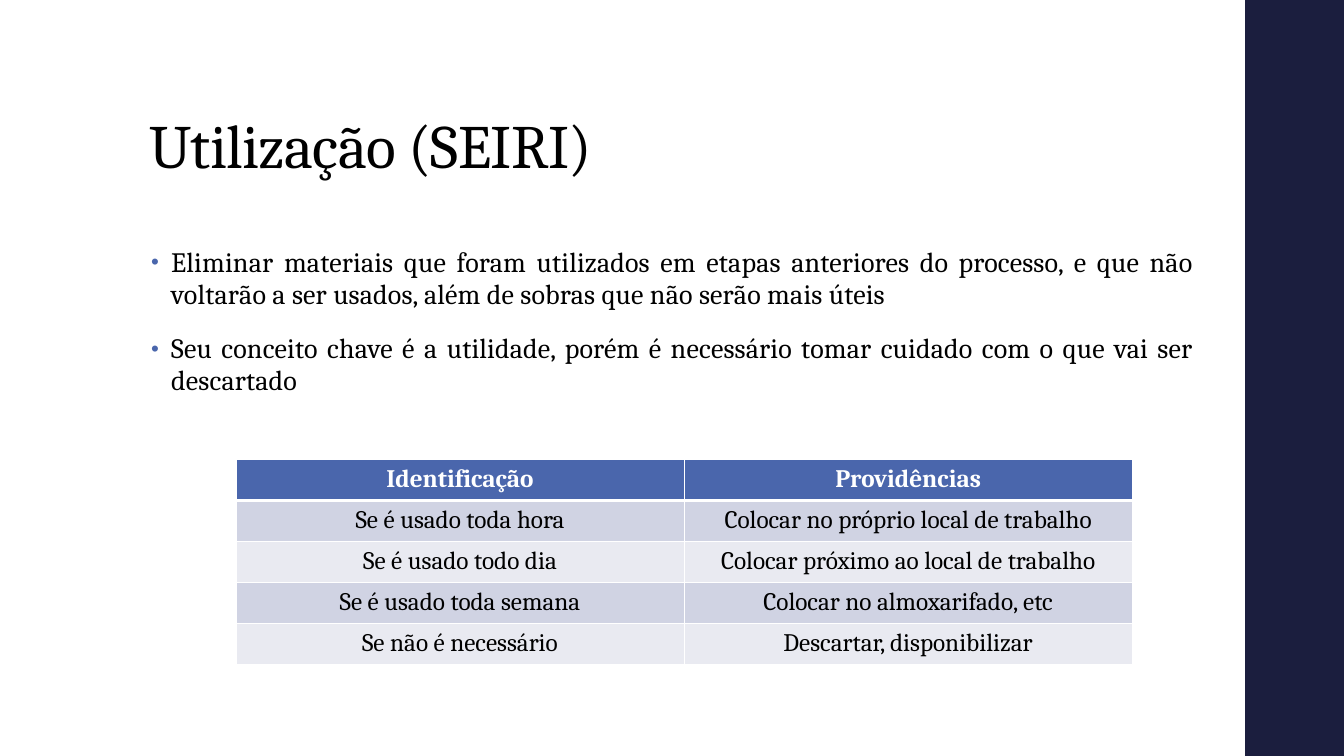
from lxml.etree import SubElement
from pptx import Presentation
from pptx.dml.color import RGBColor
from pptx.enum.shapes import MSO_SHAPE
from pptx.enum.text import MSO_ANCHOR, MSO_AUTO_SIZE, PP_ALIGN
from pptx.oxml.ns import qn
from pptx.util import Inches, Pt

TITLE_ONLY = 5
BLACK, WHITE = "000000", "FFFFFF"
NAVY, BLUE = "1B1E3E", "4A66AC"
BANDS = ("D0D3E3", "E9EAF1")

BULLETS = [
    "Eliminar materiais que foram utilizados em etapas anteriores do processo, "
    "e que não voltarão a ser usados, além de sobras que não serão mais úteis",
    "Seu conceito chave é a utilidade, porém é necessário tomar cuidado "
    "com o que vai ser descartado",
]
ACTIONS = [
    ("Identificação", "Providências"),
    ("Se é usado toda hora", "Colocar no próprio local de trabalho"),
    ("Se é usado todo dia", "Colocar próximo ao local de trabalho"),
    ("Se é usado toda semana", "Colocar no almoxarifado, etc"),
    ("Se não é necessário", "Descartar, disponibilizar"),
]


def color(value):
    return RGBColor.from_string(value)


def place(shape, left, top, width, height):
    shape.left, shape.top = Inches(left), Inches(top)
    shape.width, shape.height = Inches(width), Inches(height)


class SlideBuilder:
    """Adds styled elements to one slide."""

    font_name = "Cambria"

    def __init__(self, page):
        self.page = page

    def style(self, para, size, fill=BLACK, bold=False, tracking=0):
        """Set the paragraph font; tracking is in points."""
        font = para.font
        font.name, font.size, font.bold = self.font_name, Pt(size), bold
        font.color.rgb = color(fill)
        if tracking:
            font._element.set("spc", str(round(tracking * 100)))

    def side_band(self, left, top, width, height):
        band = self.page.shapes.add_shape(
            MSO_SHAPE.RECTANGLE, Inches(left), Inches(top), Inches(width), Inches(height)
        )
        band.shadow.inherit = False
        band.fill.solid()
        band.fill.fore_color.rgb = color(NAVY)
        band.line.fill.background()

    def title(self, text, *bounds):
        title = self.page.shapes.title
        place(title, *bounds)
        frame = title.text_frame
        frame.text = text
        frame.auto_size = MSO_AUTO_SIZE.NONE
        frame.vertical_anchor = MSO_ANCHOR.BOTTOM
        para = frame.paragraphs[0]
        para.alignment = PP_ALIGN.LEFT
        para.line_spacing = 0.9
        self.style(para, 44, tracking=-0.5)

    def bullets(self, items, left, top, width, height):
        box = self.page.shapes.add_textbox(
            Inches(left), Inches(top), Inches(width), Inches(height)
        )
        frame = box.text_frame
        frame.word_wrap = True
        frame.margin_top = Inches(0.6)
        for index, item in enumerate(items):
            para = frame.add_paragraph() if index else frame.paragraphs[0]
            para.text = item
            para.alignment = PP_ALIGN.JUSTIFY
            para.line_spacing = 0.95
            para.space_before = Pt(14 if index else 0)
            para.space_after = Pt(2)
            self.bullet(para)
            self.style(para, 20, tracking=0.1)

    def bullet(self, para):
        properties = para._p.get_or_add_pPr()
        properties.set("marL", str(Inches(0.2)))
        properties.set("indent", str(-Inches(0.2)))
        bullet_color = SubElement(properties, qn("a:buClr"))
        SubElement(bullet_color, qn("a:srgbClr"), val=BLUE)
        SubElement(properties, qn("a:buSzPct"), val="80000")
        SubElement(properties, qn("a:buFont"), typeface="Arial")
        SubElement(properties, qn("a:buChar"), char="•")

    def table(self, rows, left, top, width, height):
        table = self.page.shapes.add_table(
            len(rows), len(rows[0]),
            Inches(left), Inches(top), Inches(width), Inches(height),
        ).table
        for row, texts in enumerate(rows):
            header = row == 0
            for column, text in enumerate(texts):
                cell = table.cell(row, column)
                cell.text = text
                para = cell.text_frame.paragraphs[0]
                para.alignment = PP_ALIGN.CENTER
                self.style(para, 18, WHITE if header else BLACK, bold=header)
                self.borders(cell, top=3 if row == 1 else 1, bottom=3 if header else 1)
                cell.fill.solid()
                cell.fill.fore_color.rgb = color(BLUE if header else BANDS[(row - 1) % 2])

    def borders(self, cell, top, bottom):
        """Draw white cell borders; widths are in points."""
        properties = cell._tc.get_or_add_tcPr()
        for side, width in (("L", 1), ("R", 1), ("T", top), ("B", bottom)):
            line = SubElement(properties, qn(f"a:ln{side}"), w=str(Pt(width)))
            fill = SubElement(line, qn("a:solidFill"))
            SubElement(fill, qn("a:srgbClr"), val=WHITE)


def main():
    deck = Presentation()
    deck.slide_width, deck.slide_height = Inches(13.33), Inches(7.5)
    page = deck.slides.add_slide(deck.slide_layouts[TITLE_ONLY])
    builder = SlideBuilder(page)
    builder.side_band(12.35, 0, 1, 7.5)
    builder.title("Utilização (SEIRI)", 1.38, 0.4, 10.6, 1.45)
    builder.bullets(BULLETS, 1.4, 1.85, 10.54, 4.76)
    builder.table(ACTIONS, 2.34, 4.56, 8.89, 2.03)
    deck.save("out.pptx")


if __name__ == "__main__":
    main()
